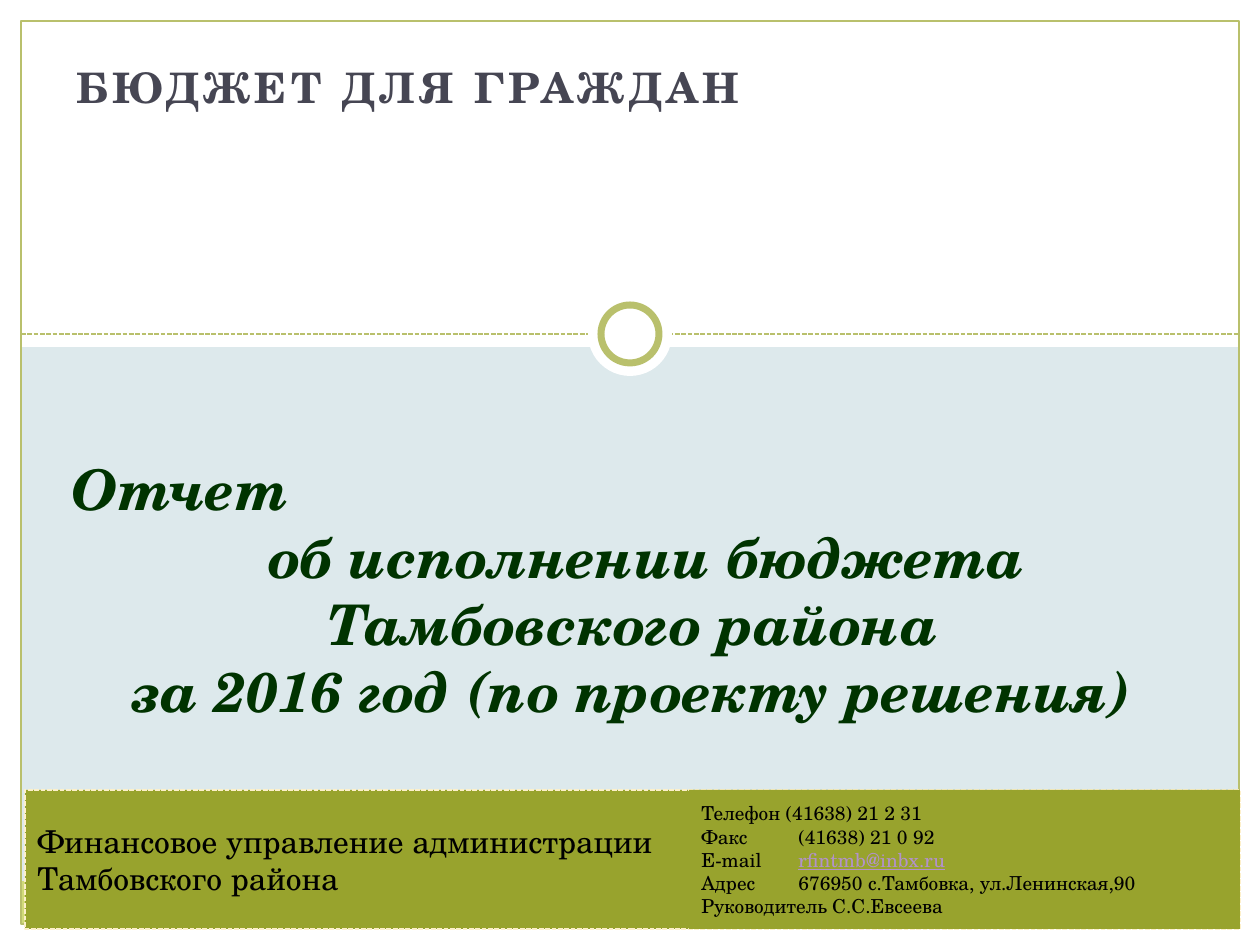
from dataclasses import dataclass

from lxml import etree
from pptx import Presentation
from pptx import util as u
from pptx.dml.color import RGBColor
from pptx.enum import dml, shapes, text
from pptx.oxml import ns

SCALE = 914400 / 126


@dataclass(frozen=True)
class Theme:
    font: str = "TeX Gyre Schola"
    background: str = "DDE9EC"
    white: str = "FFFFFF"
    frame: str = "B9C06C"
    stripe: str = "D2DA7A"
    band: str = "98A32D"
    band_edge: str = "FDF0CA"
    heading: str = "464653"
    report: str = "003300"
    ink: str = "000000"
    address: str = "B292CA"
    heading_size: int = 24
    report_size: int = 32
    office_size: int = 18
    contact_size: int = 11


THEME = Theme()


def px(length):
    return u.Emu(round(length * SCALE))


def colour(value):
    return RGBColor.from_string(value)


def style_line(line, value, width, dashed=False):
    line.color.rgb = colour(value)
    line.width = u.Pt(width)
    if dashed:
        line.dash_style = dml.MSO_LINE.SQUARE_DOT


def add_panel(slide, box, fill=None, edge=None, width=1, dashed=False,
              kind=shapes.MSO_SHAPE.RECTANGLE):
    panel = slide.shapes.add_shape(kind, *map(px, box))
    panel.shadow.inherit = False
    if fill:
        panel.fill.solid()
        panel.fill.fore_color.rgb = colour(fill)
    else:
        panel.fill.background()
    if edge:
        style_line(panel.line, edge, width, dashed)
    else:
        panel.line.fill.background()
    return panel


def add_run(paragraph, wording, size, ink, bold=False, italic=False, underline=False):
    run = paragraph.add_run()
    run.text = wording
    font = run.font
    font.name, font.size = THEME.font, u.Pt(size)
    font.bold, font.italic, font.underline = bold, italic, underline
    font.color.rgb = colour(ink)
    return run


def paragraphs(frame, count):
    for _ in range(count - 1):
        frame.add_paragraph()
    return frame.paragraphs


def place(placeholder, slide, box, anchor):
    placeholder.left, placeholder.top, placeholder.width, placeholder.height = map(px, box)
    slide.shapes._spTree.append(placeholder._element)
    frame = placeholder.text_frame
    frame.word_wrap = True
    frame.auto_size = text.MSO_AUTO_SIZE.NONE
    frame.vertical_anchor = anchor
    return frame


def add_ring(slide, centre_x, centre_y):
    for diameter, edge in ((84, None), (58, THEME.frame)):
        box = (centre_x - diameter / 2, centre_y - diameter / 2, diameter, diameter)
        add_panel(slide, box, THEME.white, edge, 4, kind=shapes.MSO_SHAPE.OVAL)


def add_backdrop(slide, box):
    left, top, width, height = box
    margin, divider = 21, top + 334
    inner = width - 2 * margin
    for edge_box in (
        (left, top + height - margin, width, margin),
        (left + width - margin, top, margin, height),
        (left, top, margin, height),
        (left, top, width, 347),
    ):
        add_panel(slide, edge_box, THEME.white)
    add_panel(slide, (left + margin, top + 881, inner, 43), THEME.stripe)
    rule = slide.shapes.add_connector(
        shapes.MSO_CONNECTOR.STRAIGHT,
        *map(px, (left + margin, divider, left + width - margin, divider)))
    style_line(rule.line, THEME.frame, 0.9, True)
    etree.SubElement(rule._element.spPr, ns.qn("a:effectLst"))
    add_panel(slide, (left + margin, top + margin, inner, height - 2 * margin),
              edge=THEME.frame, width=0.75)
    add_ring(slide, left + width / 2, divider)


def add_heading(slide, box):
    frame = place(slide.placeholders[1], slide, box, text.MSO_ANCHOR.TOP)
    heading = frame.paragraphs[0]
    heading.alignment = text.PP_ALIGN.LEFT
    run = add_run(heading, "БЮДЖЕТ ДЛЯ ГРАЖДАН", THEME.heading_size, THEME.heading, bold=True)
    run._r.get_or_add_rPr().set("spc", "250")


def add_report_title(slide, box):
    frame = place(slide.shapes.title, slide, box, text.MSO_ANCHOR.BOTTOM)
    lines = (
        ("Отчет", text.PP_ALIGN.LEFT, 0),
        ("об исполнении бюджета", text.PP_ALIGN.CENTER, 28),
        ("Тамбовского района", text.PP_ALIGN.CENTER, 0),
        ("за 2016 год (по проекту решения)", text.PP_ALIGN.CENTER, 0),
    )
    for paragraph, (wording, alignment, indent) in zip(paragraphs(frame, len(lines)), lines):
        paragraph.alignment = alignment
        paragraph._p.get_or_add_pPr().set("marL", str(px(indent)))
        add_run(paragraph, wording, THEME.report_size, THEME.report, bold=True, italic=True)


def add_band_text(panel, lines, size, tab=None):
    frame = panel.text_frame
    frame.word_wrap = True
    frame.vertical_anchor = text.MSO_ANCHOR.MIDDLE
    for paragraph, runs in zip(paragraphs(frame, len(lines)), lines):
        paragraph.alignment = text.PP_ALIGN.LEFT
        if tab:
            stops = etree.SubElement(paragraph._p.get_or_add_pPr(), ns.qn("a:tabLst"))
            etree.SubElement(stops, ns.qn("a:tab"), pos=str(px(tab)), algn="l")
        for wording, ink, underline in runs:
            add_run(paragraph, wording, size, ink, underline=underline)


def add_footer(slide, box):
    left, top, width, height = box
    split = 664

    def plain(wording):
        return wording, THEME.ink, False

    office = add_panel(slide, box, THEME.band, THEME.band_edge, 0.9, True)
    add_band_text(office, [
        [plain("Финансовое управление администрации")],
        [plain("Тамбовского района")],
    ], THEME.office_size)
    contacts = add_panel(slide, (left + split, top, width - split, height), THEME.band)
    add_band_text(contacts, [
        [plain("Телефон (41638) 21 2 31")],
        [plain("Факс\t(41638) 21 0 92")],
        [plain("E-mail\t"), ("rfintmb@inbx.ru", THEME.address, True)],
        [plain("Адрес\t676950 c.Тамбовка, ул.Ленинская,90")],
        [plain("Руководитель С.С.Евсеева")],
    ], THEME.contact_size, tab=97)


def main():
    deck = Presentation()
    deck.slide_width, deck.slide_height = px(1260), px(945)
    slide = deck.slides.add_slide(deck.slide_layouts[0])
    slide.background.fill.solid()
    slide.background.fill.fore_color.rgb = colour(THEME.background)
    add_backdrop(slide, (0, 0, 1260, 945))
    add_heading(slide, (64, 55, 893, 242))
    add_report_title(slide, (59, 294, 1147, 436))
    add_footer(slide, (25, 790, 1215, 139))
    deck.save("out.pptx")


if __name__ == "__main__":
    main()
